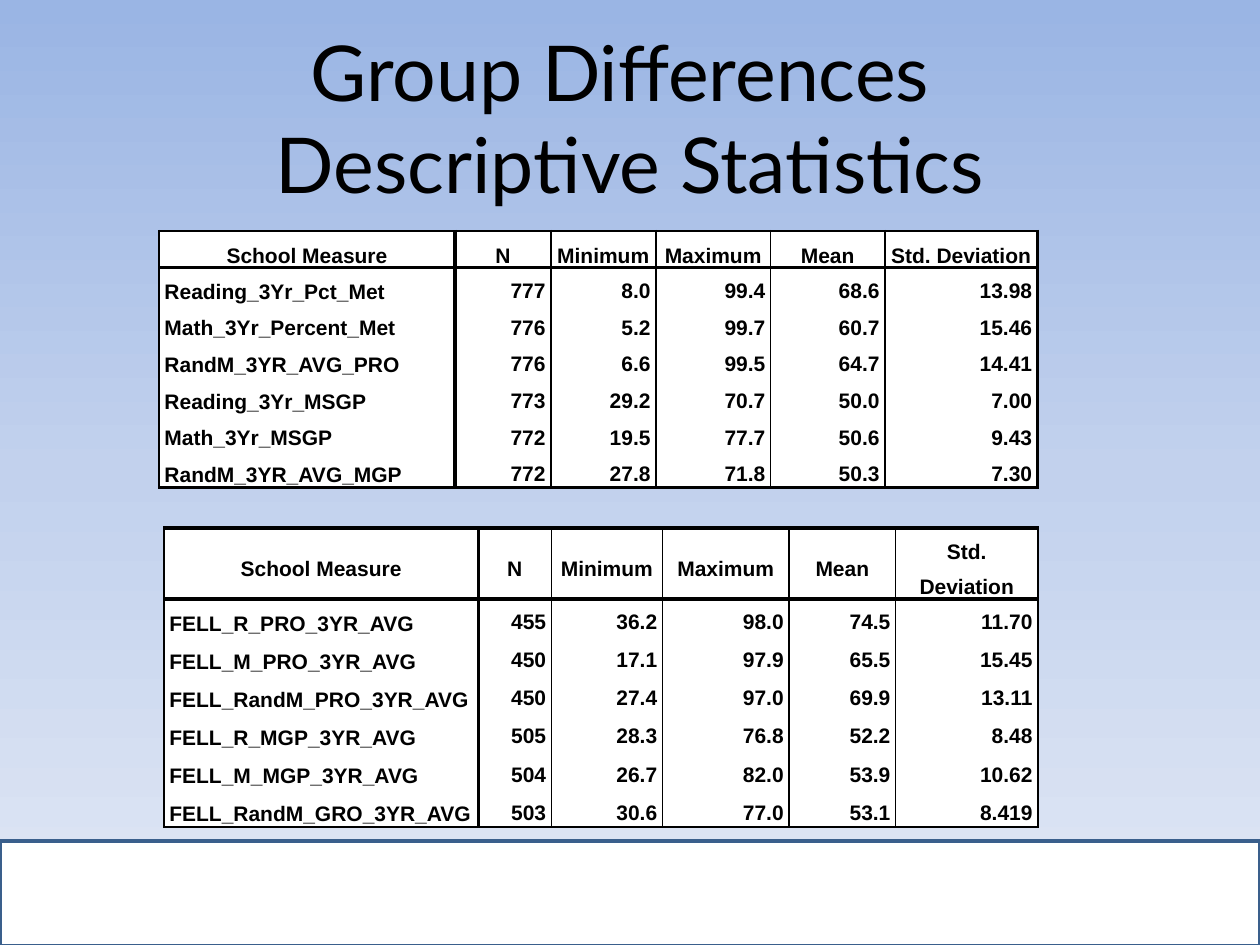
from copy import deepcopy

from lxml import etree
from pptx import Presentation
from pptx.dml.color import RGBColor
from pptx.enum.shapes import MSO_SHAPE
from pptx.enum.text import MSO_ANCHOR, MSO_AUTO_SIZE, PP_ALIGN
from pptx.oxml.ns import qn
from pptx.util import Pt

RECTANGLE = MSO_SHAPE.RECTANGLE
TOP, MIDDLE, BOTTOM = MSO_ANCHOR.TOP, MSO_ANCHOR.MIDDLE, MSO_ANCHOR.BOTTOM
LEFT, CENTER, RIGHT = PP_ALIGN.LEFT, PP_ALIGN.CENTER, PP_ALIGN.RIGHT
NO_FIT = MSO_AUTO_SIZE.NONE

COLORS = {
    "sky_top": "9AB5E4",
    "sky_middle": "C2D1ED",
    "sky_bottom": "E1E8F5",
    "footer_line": "3A5F8C",
    "white": "FFFFFF",
    "black": "000000",
}
THIN, MEDIUM, THICK = 1, 1.5, 2.25

HEADINGS = ["School Measure", "N", "Minimum", "Maximum", "Mean", "Std. Deviation"]
SCHOOL_ROWS = [
    ["Reading_3Yr_Pct_Met", "777", "8.0", "99.4", "68.6", "13.98"],
    ["Math_3Yr_Percent_Met", "776", "5.2", "99.7", "60.7", "15.46"],
    ["RandM_3YR_AVG_PRO", "776", "6.6", "99.5", "64.7", "14.41"],
    ["Reading_3Yr_MSGP", "773", "29.2", "70.7", "50.0", "7.00"],
    ["Math_3Yr_MSGP", "772", "19.5", "77.7", "50.6", "9.43"],
    ["RandM_3YR_AVG_MGP", "772", "27.8", "71.8", "50.3", "7.30"],
]
FELL_ROWS = [
    ["FELL_R_PRO_3YR_AVG", "455", "36.2", "98.0", "74.5", "11.70"],
    ["FELL_M_PRO_3YR_AVG", "450", "17.1", "97.9", "65.5", "15.45"],
    ["FELL_RandM_PRO_3YR_AVG", "450", "27.4", "97.0", "69.9", "13.11"],
    ["FELL_R_MGP_3YR_AVG", "505", "28.3", "76.8", "52.2", "8.48"],
    ["FELL_M_MGP_3YR_AVG", "504", "26.7", "82.0", "53.9", "10.62"],
    ["FELL_RandM_GRO_3YR_AVG", "503", "30.6", "77.0", "53.1", "8.419"],
]


def color(name):
    return RGBColor.from_string(COLORS[name])


class SlideBuilder:
    title_font = "Lato"
    table_font = "Arial"

    def __init__(self, page):
        self.page = page

    def background(self, names):
        fill = self.page.background.fill
        fill.gradient()
        fill.gradient_angle = 270
        stop_list = self.page.element.find(".//" + qn("a:gsLst"))
        stop_list.append(deepcopy(stop_list[0]))
        for index, name in enumerate(names):
            stop = fill.gradient_stops[index]
            stop.color.rgb = color(name)
            stop.position = index / (len(names) - 1)

    def footer(self, left, top, width, height):
        bar = self.page.shapes.add_shape(
            RECTANGLE, Pt(left), Pt(top), Pt(width), Pt(height))
        bar.shadow.inherit = False
        bar.fill.solid()
        bar.fill.fore_color.rgb = color("white")
        bar.line.color.rgb = color("footer_line")
        bar.line.width = Pt(2)

    def title(self, text, left, top, width, height):
        box = self.page.shapes.title
        box.left, box.top, box.width, box.height = Pt(left), Pt(top), Pt(width), Pt(height)
        frame = box.text_frame
        frame.text = text
        frame.auto_size = NO_FIT
        frame.word_wrap = True
        frame.vertical_anchor = MIDDLE
        para = frame.paragraphs[0]
        para.alignment = CENTER
        self.style(para, self.title_font, 44, False)

    def style(self, para, font, size, bold):
        para.font.name = font
        para.font.size = Pt(size)
        para.font.bold = bold
        para.font.color.rgb = color("black")

    def borders(self, cell, widths):
        properties = cell._tc.get_or_add_tcPr()
        for side, width in zip("LRTB", widths):
            line = etree.SubElement(properties, qn("a:ln" + side), w=str(Pt(width)))
            if width:
                solid = etree.SubElement(line, qn("a:solidFill"))
                etree.SubElement(solid, qn("a:srgbClr"), val=COLORS["black"])
            else:
                etree.SubElement(line, qn("a:noFill"))

    def cell(self, cell, text, alignment, anchor, widths):
        self.borders(cell, widths)
        cell.fill.solid()
        cell.fill.fore_color.rgb = color("white")
        cell.margin_left = cell.margin_right = cell.margin_top = cell.margin_bottom = 0
        cell.vertical_anchor = anchor
        cell.text = text
        para = cell.text_frame.paragraphs[0]
        para.alignment = alignment
        para.line_spacing = 1.5
        indents = para._p.get_or_add_pPr()
        for side in ("marL", "marR"):
            indents.set(side, str(Pt(3)))
        self.style(para, self.table_font, 12, True)

    def table(self, left, top, columns, head_height, row_height, body, head_anchor, top_line):
        rows = [HEADINGS] + body
        height = head_height + row_height * len(body)
        grid = self.page.shapes.add_table(
            len(rows), len(columns), Pt(left), Pt(top), Pt(sum(columns)), Pt(height)).table
        grid.first_row = grid.horz_banding = False
        for column, width in zip(grid.columns, columns):
            column.width = Pt(width)
        verticals = [MEDIUM, THICK] + [THIN] * (len(columns) - 2) + [MEDIUM]
        horizontals = [top_line, THICK] + [0] * (len(body) - 1) + [MEDIUM]
        for r, values in enumerate(rows):
            grid.rows[r].height = Pt(row_height if r else head_height)
            for c, text in enumerate(values):
                if r == 0:
                    alignment, anchor = CENTER, head_anchor
                elif c == 0:
                    alignment, anchor = LEFT, MIDDLE
                else:
                    alignment, anchor = RIGHT, TOP
                widths = verticals[c:c + 2] + horizontals[r:r + 2]
                self.cell(grid.cell(r, c), text, alignment, anchor, widths)


def main():
    deck = Presentation()
    deck.slide_width, deck.slide_height = Pt(720), Pt(540)
    builder = SlideBuilder(deck.slides.add_slide(deck.slide_layouts[5]))
    builder.background(["sky_top", "sky_middle", "sky_bottom"])
    builder.footer(0, 480.5, 720, 60)
    builder.title("Group Differences \vDescriptive Statistics", 36, 21.6, 648, 90)
    builder.table(93.8, 301.8, [179.5, 41.8, 63.5, 72.3, 61, 81.2], 40.5, 21.75,
                  FELL_ROWS, MIDDLE, THICK)
    builder.table(91, 132, [169, 54.8, 60, 65.6, 65.3, 87.2], 20.95, 20.95,
                  SCHOOL_ROWS, BOTTOM, MEDIUM)
    deck.save("out.pptx")


if __name__ == "__main__":
    main()
